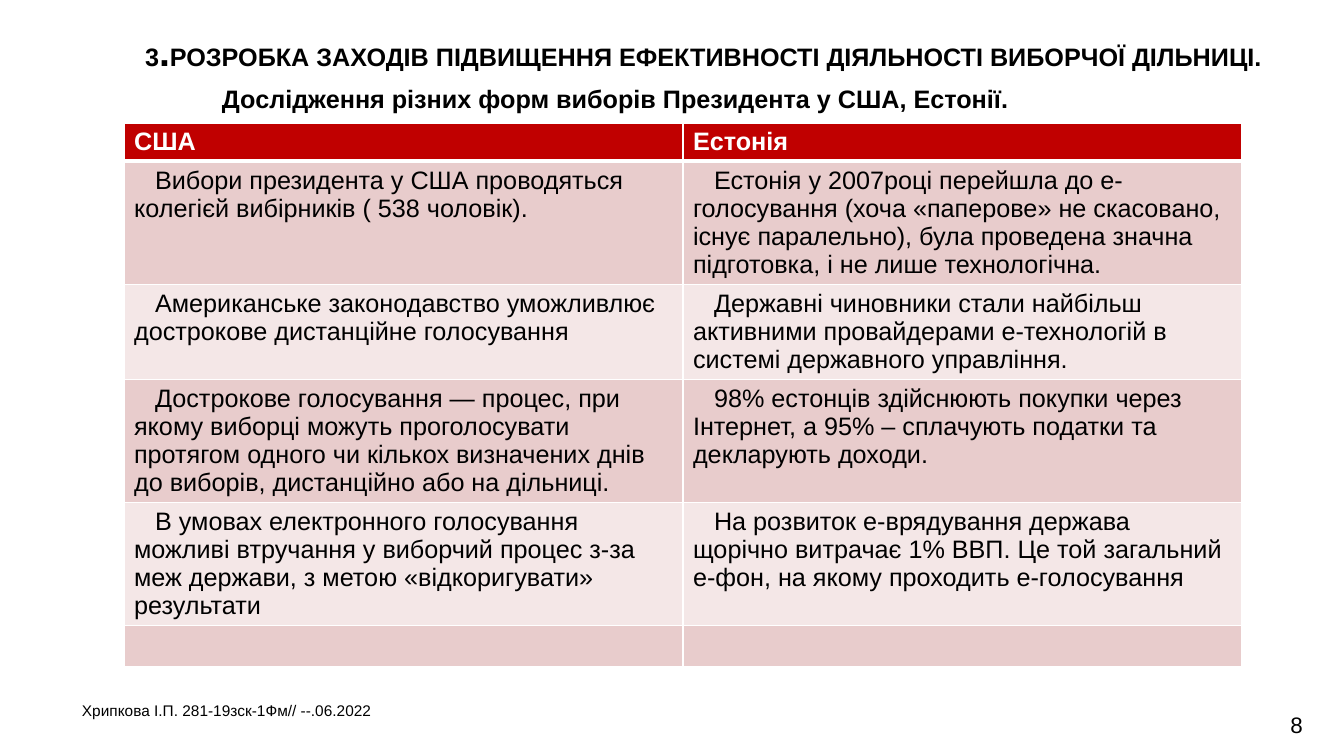
import pptx
import pptx.util
import pptx.dml.color
import pptx.enum.text
import lxml.etree

RGB = pptx.dml.color.RGBColor
BLACK = RGB(0, 0, 0)
WHITE = RGB(255, 255, 255)
RED = RGB(0xC0, 0, 0)
PINK = RGB(0xE8, 0xCC, 0xCC)
PALE = RGB(0xF4, 0xE7, 0xE7)
ALIGN = pptx.enum.text.PP_ALIGN
EMU_PER_PX = 914400 / 100.8
SLIDE_SIZE = (1344, 756)

HEADING = [
    ("3", 18), (".", 28),
    ("РОЗРОБКА ЗАХОДІВ ПІДВИЩЕННЯ ЕФЕКТИВНОСТІ ДІЯЛЬНОСТІ ВИБОРЧОЇ ДІЛЬНИЦІ.", 18),
]
SUBHEADING = [("Дослідження різних форм виборів Президента у США, Естонії.", 18)]
AUTHOR = [("Хрипкова І.П. 281-19зск-1Фм// --.06.2022", 11)]
NUMBER = [("8", 16)]

ROWS = [
    ("США", "Естонія"),
    ("Вибори президента у США проводяться колегієй вибірників ( 538 чоловік).",
     "Естонія у 2007році перейшла до е-голосування (хоча «паперове» не скасовано, "
     "існує паралельно), була проведена значна підготовка, і не лише технологічна."),
    ("Американське законодавство уможливлює дострокове дистанційне голосування",
     "Державні чиновники стали найбільш активними провайдерами е-технологій "
     "в системі державного управління."),
    ("Дострокове голосування — процес, при якому виборці можуть проголосувати протягом "
     "одного чи кількох визначених днів до виборів, дистанційно або на дільниці.",
     "98% естонців здійснюють покупки через Інтернет, а 95% – сплачують податки "
     "та декларують доходи."),
    ("В умовах електронного голосування можливі втручання у виборчий процес з-за меж "
     "держави, з метою «відкоригувати» результати",
     "На розвиток е-врядування держава щорічно витрачає 1% ВВП. Це той загальний е-фон, "
     "на якому проходить е-голосування"),
    ("", ""),
]
ROW_HEIGHTS = [38, 123, 95, 123, 123, 38]
TABLE_BOX = (124, 123, 1118, sum(ROW_HEIGHTS))
INDENT = 21


def px(n):
    return round(n * EMU_PER_PX)


def write(p, runs, bold=False, color=BLACK):
    for text, size in runs:
        r = p.add_run()
        r.text = text
        r.font.color.rgb = color
        look = {"name": "Arial", "size": pptx.util.Pt(size), "bold": bold}
        for key, value in look.items():
            setattr(r.font, key, value)


def fill_box(s, box, runs, bold=False, align=ALIGN.LEFT):
    for key, value in zip(("left", "top", "width", "height"), box):
        setattr(s, key, px(value))
    tf = s.text_frame
    frame = {"margin_left": 0, "margin_top": 0, "margin_right": 0, "margin_bottom": 0,
             "word_wrap": True, "auto_size": pptx.enum.text.MSO_AUTO_SIZE.NONE,
             "vertical_anchor": pptx.enum.text.MSO_ANCHOR.TOP}
    for key, value in frame.items():
        setattr(tf, key, value)
    p = tf.paragraphs[0]
    pPr = p._p.get_or_add_pPr()
    pPr.set("marL", "0")
    pPr.set("indent", "0")
    lxml.etree.SubElement(pPr, pptx.oxml.ns.qn("a:buNone"))
    for key, value in {"alignment": align, "line_spacing": 1.0,
                       "space_before": pptx.util.Pt(0)}.items():
        setattr(p, key, value)
    write(p, runs, bold)


def set_borders(cell, widths):
    tcPr = cell._tc.get_or_add_tcPr()
    for i, (side, width) in enumerate(widths.items()):
        ln = lxml.etree.Element(pptx.oxml.ns.qn("a:ln" + side), w=str(pptx.util.Pt(width)))
        solid = lxml.etree.SubElement(ln, pptx.oxml.ns.qn("a:solidFill"))
        lxml.etree.SubElement(solid, pptx.oxml.ns.qn("a:srgbClr"), val=str(WHITE))
        tcPr.insert(i, ln)


def add_comparison(slide):
    table = slide.shapes.add_table(len(ROWS), 2, *map(px, TABLE_BOX)).table
    for i, (texts, height) in enumerate(zip(ROWS, ROW_HEIGHTS)):
        table.rows[i].height = px(height)
        header = i == 0
        for j, text in enumerate(texts):
            cell = table.cell(i, j)
            cell.fill.solid()
            cell.fill.fore_color.rgb = RED if header else (PINK if i % 2 else PALE)
            set_borders(cell, {"L": 1, "R": 1, "T": 3 if i == 1 else 1,
                               "B": 3 if header else 1})
            p = cell.text_frame.paragraphs[0]
            if text:
                if not header:
                    p._p.get_or_add_pPr().set("indent", str(px(INDENT)))
                write(p, [(text, 18)], header, WHITE if header else BLACK)


def main():
    prs = pptx.Presentation()
    prs.slide_width, prs.slide_height = map(px, SLIDE_SIZE)
    slide = prs.slides.add_slide(prs.slide_layouts[3])
    title, subtitle, author = slide.placeholders
    fill_box(title, (145, 27, 1180, 46), HEADING, True)
    fill_box(subtitle, (222, 83, 1000, 30), SUBHEADING, True)
    fill_box(author, (82, 701, 1098, 20), AUTHOR)
    add_comparison(slide)
    number = slide.shapes.add_textbox(0, 0, 0, 0)
    fill_box(number, (1264, 711, 65, 28), NUMBER, align=ALIGN.CENTER)
    prs.save("out.pptx")


if __name__ == "__main__":
    main()
